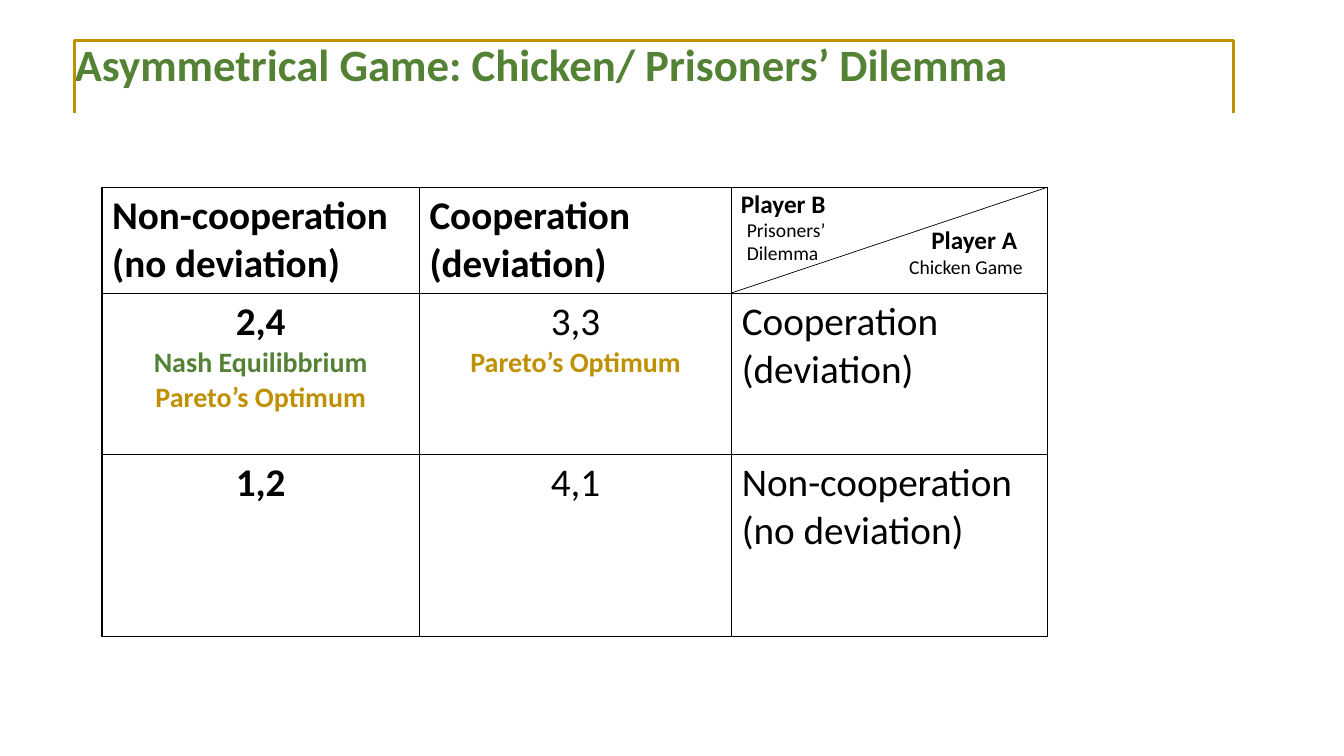
"""Build the slide on an asymmetrical Chicken / Prisoners' Dilemma game."""
from lxml.etree import SubElement
from pptx import Presentation
from pptx.dml.color import RGBColor
from pptx.enum.text import MSO_ANCHOR as ANCHOR, MSO_AUTO_SIZE as AUTOSIZE, PP_ALIGN as ALIGN
from pptx.enum.shapes import MSO_CONNECTOR as CONNECTOR
from pptx.oxml.ns import qn
from pptx.util import Cm, Pt

BLACK, GREEN, GOLD = "000000", "548235", "BF9000"
LEFT, TOP = 2.57, 4.72
COLS, ROWS = (8, 7.87, 7.95), (2.66, 4.06, 4.6)
NASH, PARETO = ("Nash Equilibbrium", GREEN), ("Pareto’s Optimum", GOLD)
COOPERATE = ("Cooperation", "(deviation)")
DEFECT = ("Non-cooperation", "(no deviation)")


def rgb(value):
    return RGBColor.from_string(value)


def style(p, size, color=BLACK, bold=False, align=ALIGN.LEFT):
    f = p.font
    f.name, f.size, f.bold = "Calibri", Pt(size), bold
    f.color.rgb = rgb(color)
    p.alignment = align


def add_title(s, text):
    sp = s.shapes.title
    sp.left, sp.top, sp.width, sp.height = Cm(1.63), Cm(0.93), Cm(29.21), Cm(1.5)
    tf = sp.text_frame
    tf.text = text
    tf.auto_size, tf.vertical_anchor = AUTOSIZE.NONE, ANCHOR.MIDDLE
    p = tf.paragraphs[0]
    p.line_spacing = 0.9
    style(p, 32, GREEN, True)


def add_bracket(s, left, top, right, bottom):
    builder = s.shapes.build_freeform(Cm(left), Cm(bottom))
    corners = [(left, top), (right, top), (right, bottom)]
    builder.add_line_segments([(Cm(x), Cm(y)) for x, y in corners], close=False)
    sp = builder.convert_to_shape()
    sp.shadow.inherit = False
    sp.fill.background()
    sp.line.color.rgb, sp.line.width = rgb(GOLD), Pt(2.25)


def add_borders(cell):
    tc_pr = cell._tc.get_or_add_tcPr()
    for side in ("a:lnL", "a:lnR", "a:lnT", "a:lnB"):
        ln = SubElement(tc_pr, qn(side), w=str(Pt(1)))
        SubElement(SubElement(ln, qn("a:solidFill")), qn("a:srgbClr"), val=BLACK)


def fill_cell(cell, lines, bold, align, notes=()):
    add_borders(cell)
    cell.fill.background()
    tf = cell.text_frame
    tf.text = "\n".join([*lines, *(text for text, _ in notes)])
    for p in tf.paragraphs[:len(lines)]:
        style(p, 28, BLACK, bold, align)
    for p, (_, color) in zip(tf.paragraphs[len(lines):], notes):
        style(p, 20, color, True, align)


def add_payoffs(s):
    table = s.shapes.add_table(len(ROWS), len(COLS), Cm(LEFT), Cm(TOP),
                               Cm(sum(COLS)), Cm(sum(ROWS))).table
    table.first_row = table.horz_banding = False
    for col, width in zip(table.columns, COLS):
        col.width = Cm(width)
    for row, height in zip(table.rows, ROWS):
        row.height = Cm(height)
    for c, lines in enumerate((DEFECT, COOPERATE, ())):
        fill_cell(table.cell(0, c), lines, True, ALIGN.LEFT)
    body = (
        (("2,4", (NASH, PARETO)), ("3,3", (PARETO,)), COOPERATE),
        (("1,2", ()), ("4,1", ()), DEFECT),
    )
    for r, (*payoffs, strategy) in enumerate(body, 1):
        for c, (payoff, notes) in enumerate(payoffs):
            fill_cell(table.cell(r, c), (payoff,), c == 0, ALIGN.CENTER, notes)
        fill_cell(table.cell(r, 2), strategy, False, ALIGN.LEFT)


def add_diagonal(s):
    right = LEFT + sum(COLS)
    cxn = s.shapes.add_connector(CONNECTOR.STRAIGHT, Cm(right), Cm(TOP),
                                 Cm(right - COLS[-1]), Cm(TOP + ROWS[0]))
    cxn.line.color.rgb, cxn.line.width = rgb(BLACK), Pt(0.5)
    SubElement(cxn._element.spPr, qn("a:effectLst"))


def add_label(s, text, left, top, width, height, size, bold=False):
    tf = s.shapes.add_textbox(Cm(left), Cm(top), Cm(width), Cm(height)).text_frame
    tf.word_wrap = True
    tf.text = text
    style(tf.paragraphs[0], size, BLACK, bold)


def main():
    prs = Presentation()
    prs.slide_width, prs.slide_height = Cm(33.87), Cm(19.05)
    s = prs.slides.add_slide(prs.slide_layouts[5])
    add_bracket(s, 1.88, 1.02, 31.09, 2.84)
    add_title(s, "Asymmetrical Game: Chicken/ Prisoners’ Dilemma")
    add_payoffs(s)
    add_diagonal(s)
    add_label(s, "Player B", 18.42, 4.62, 3.28, 1.02, 18, True)
    add_label(s, "Player A", 23.22, 5.54, 3.28, 1.02, 18, True)
    add_label(s, "Chicken Game", 22.66, 6.3, 4.34, 0.86, 14)
    add_label(s, "Prisoners’ Dilemma", 18.57, 5.36, 3.4, 1.45, 14)
    prs.save("out.pptx")


if __name__ == "__main__":
    main()
